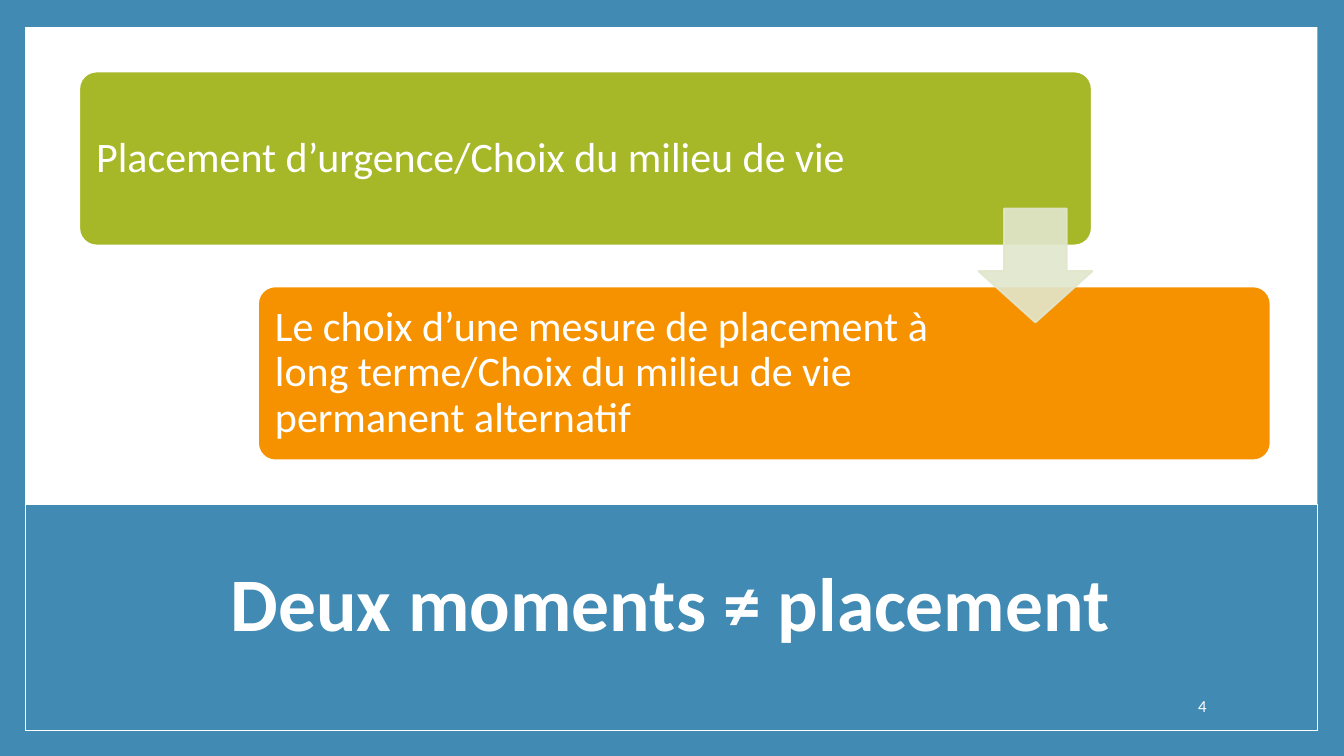
from dataclasses import dataclass

from lxml import etree
from pptx import Presentation
from pptx.dml.color import RGBColor
from pptx.enum.shapes import MSO_SHAPE
from pptx.enum.text import MSO_ANCHOR, MSO_AUTO_SIZE, PP_ALIGN
from pptx.oxml.ns import qn
from pptx.shapes.autoshape import Shape
from pptx.slide import Slide
from pptx.util import Pt

RECT = MSO_SHAPE.RECTANGLE
ROUND = MSO_SHAPE.ROUNDED_RECTANGLE
ARROW = MSO_SHAPE.DOWN_ARROW
MIDDLE = MSO_ANCHOR.MIDDLE
FIXED = MSO_AUTO_SIZE.NONE
LEFT, CENTER, RIGHT = PP_ALIGN.LEFT, PP_ALIGN.CENTER, PP_ALIGN.RIGHT


@dataclass(frozen=True)
class Theme:
    blue: str = "418AB3"
    white: str = "FFFFFF"
    green: str = "A6B727"
    orange: str = "F69200"
    pale: str = "E1E6CD"
    font: str = "Calibri"
    title: float = 54
    body: float = 30
    small: float = 12


@dataclass(frozen=True)
class Box:
    left: float
    top: float
    width: float
    height: float


@dataclass(frozen=True)
class Panel:
    box: Box
    fill: str
    edge: float = 0


@dataclass(frozen=True)
class Card:
    text: str
    fill: str
    right: float  # right inset, keeps the text clear of the arrow


THEME = Theme()
PAGE = Box(0, 0, 960, 540)
PANELS = [
    Panel(PAGE, THEME.blue),
    Panel(Box(18, 19.3, 923, 502), THEME.white),
    Panel(Box(18, 360.4, 923, 161.3), THEME.blue, 1),
]
CARDS = [
    Card("Placement d’urgence/Choix du milieu de vie", THEME.green, 131),
    Card("Le choix d’une mesure de placement à long terme/"
         "Choix du milieu de vie permanent alternatif", THEME.orange, 218),
]
FIRST = Box(56.5, 51, 723.5, 124.5)
STEP_X, STEP_Y = 127.7, 153.5


def place(shape: Shape, box: Box) -> None:
    shape.left, shape.top = Pt(box.left), Pt(box.top)
    shape.width, shape.height = Pt(box.width), Pt(box.height)


def add_block(slide: Slide, kind: MSO_SHAPE, box: Box, fill: str,
              edge: float = 0, line: str = THEME.white) -> Shape:
    shape = slide.shapes.add_shape(kind, 0, 0, 0, 0)
    place(shape, box)
    shape.shadow.inherit = False
    shape.fill.solid()
    shape.fill.fore_color.rgb = RGBColor.from_string(fill)
    if edge:
        shape.line.width = Pt(edge)
        shape.line.color.rgb = RGBColor.from_string(line)
    else:
        shape.line.fill.background()
    return shape


def write(shape: Shape, text: str, size: float, align: PP_ALIGN,
          bold: bool = False) -> None:
    frame = shape.text_frame
    frame.text = text
    frame.word_wrap = True
    frame.auto_size = FIXED
    frame.vertical_anchor = MIDDLE
    para = frame.paragraphs[0]
    para.alignment = align
    para.line_spacing = 0.9
    font = para.runs[0].font
    font.name, font.size, font.bold = THEME.font, Pt(size), bold
    font.color.rgb = RGBColor.from_string(THEME.white)


def add_card(slide: Slide, card: Card, order: int) -> None:
    box = Box(FIRST.left + order * STEP_X, FIRST.top + order * STEP_Y,
              FIRST.width, FIRST.height)
    shape = add_block(slide, ROUND, box, card.fill, 1.5)
    shape.adjustments[0] = 0.1
    write(shape, card.text, THEME.body, LEFT)
    shape.text_frame.margin_left = Pt(8.6)
    shape.text_frame.margin_right = Pt(card.right)


def add_arrow(slide: Slide) -> None:
    shape = add_block(slide, ARROW, Box(699, 149, 81.2, 81.2),
                      THEME.pale, 1.5, THEME.pale)
    shape.adjustments[0], shape.adjustments[1] = 0.55, 0.45
    for color in shape.element.spPr.iter(qn("a:srgbClr")):
        etree.SubElement(color, qn("a:alpha")).set("val", "90000")


def add_title(slide: Slide) -> None:
    """Fill the title and bring it in front of the panels."""
    title = slide.shapes.title
    place(title, Box(90, 380, 777.6, 106.6))
    write(title, "Deux moments ≠ placement", THEME.title, CENTER, True)
    title.element.getparent().append(title.element)


def main() -> None:
    deck = Presentation()
    deck.slide_width, deck.slide_height = Pt(PAGE.width), Pt(PAGE.height)
    slide = deck.slides.add_slide(deck.slide_layouts[5])
    for panel in PANELS:
        add_block(slide, RECT, panel.box, panel.fill, panel.edge)
    add_title(slide)
    for order, card in enumerate(CARDS):
        add_card(slide, card, order)
    add_arrow(slide)
    number = slide.shapes.add_textbox(0, 0, 0, 0)
    place(number, Box(734.4, 490.3, 134.6, 28.8))
    write(number, "4", THEME.small, RIGHT)
    deck.save("out.pptx")


if __name__ == "__main__":
    main()
